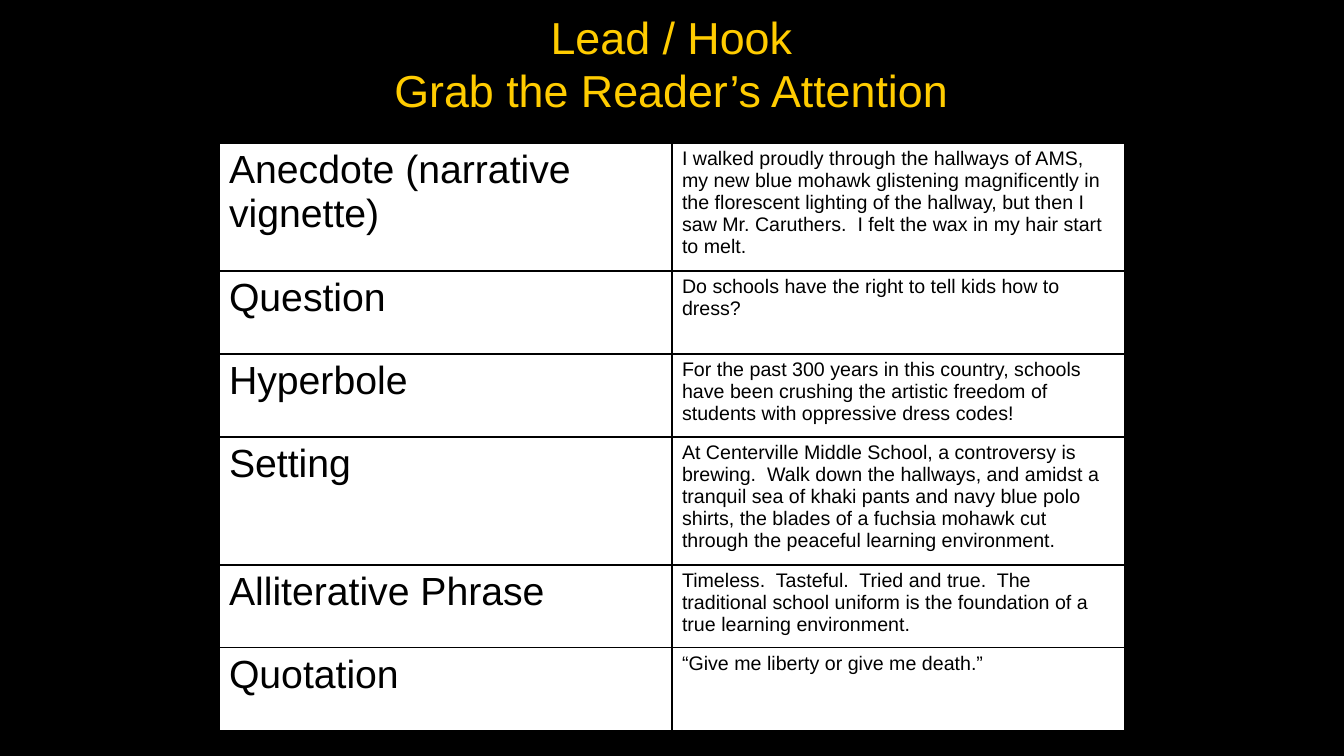
from dataclasses import dataclass

from lxml import etree
from pptx import Presentation
from pptx.dml.color import RGBColor
from pptx.enum import text
from pptx.oxml import ns
from pptx.util import Pt

EMU_PER_PX = 914400 / 100.8


@dataclass(frozen=True)
class Theme:
    font: str = "Arial"
    background: str = "000000"
    title: str = "FFCC00"
    cell: str = "FFFFFF"
    ink: str = "000000"
    title_size: int = 32
    term_size: int = 28
    example_size: int = 14
    thick: float = 2.25
    thin: float = 1


THEME = Theme()
TITLE = "Lead / Hook\vGrab the Reader’s Attention"
TALL, SHORT = 128, 83
COLUMN_WIDTH = 453
HOOKS = [
    ("Anecdote (narrative vignette)",
     "I walked proudly through the hallways of AMS, my new blue mohawk "
     "glistening magnificently in the florescent lighting of the hallway, but "
     "then I saw Mr. Caruthers.  I felt the wax in my hair start to melt.",
     TALL),
    ("Question", "Do schools have the right to tell kids how to dress?", SHORT),
    ("Hyperbole",
     "For the past 300 years in this country, schools have been crushing the "
     "artistic freedom of students with oppressive dress codes!", SHORT),
    ("Setting",
     "At Centerville Middle School, a controversy is brewing.  Walk down the "
     "hallways, and amidst a tranquil sea of khaki pants and navy blue polo "
     "shirts, the blades of a fuchsia mohawk cut through the peaceful learning "
     "environment.", TALL),
    ("Alliterative Phrase",
     "Timeless.  Tasteful.  Tried and true.  The traditional school uniform is "
     "the foundation of a true learning environment.", SHORT),
    ("Quotation", "“Give me liberty or give me death.”", SHORT),
]


def px(length):
    return round(length * EMU_PER_PX)


def paint(fill, color):
    fill.solid()
    fill.fore_color.rgb = RGBColor.from_string(color)


def write(frame, words, size, color):
    frame.text = words
    for para in frame.paragraphs:
        for span in para.runs:
            span.font.name = THEME.font
            span.font.size = Pt(size)
            span.font.color.rgb = RGBColor.from_string(color)


def add_title(page):
    box = page.shapes.add_textbox(px(218), 0, px(907), px(126))
    frame = box.text_frame
    frame.word_wrap = True
    frame.vertical_anchor = text.MSO_ANCHOR.MIDDLE
    write(frame, TITLE, THEME.title_size, THEME.title)
    frame.paragraphs[0].alignment = text.PP_ALIGN.CENTER


def add_borders(cell, top, bottom):
    """Rule the cell's sides thick and its top and bottom as given, in points."""
    properties = cell._tc.get_or_add_tcPr()
    widths = {"L": THEME.thick, "R": THEME.thick, "T": top, "B": bottom}
    for side, width in widths.items():
        line = etree.SubElement(properties, ns.qn(f"a:ln{side}"), w=str(Pt(width)))
        fill = etree.SubElement(line, ns.qn("a:solidFill"))
        etree.SubElement(fill, ns.qn("a:srgbClr"), val=THEME.ink)


def add_hook_table(page):
    height = sum(hook[2] for hook in HOOKS)
    table = page.shapes.add_table(
        len(HOOKS), 2, px(219), px(143), px(2 * COLUMN_WIDTH), px(height)).table
    table.first_row = table.horz_banding = False
    for column in table.columns:
        column.width = px(COLUMN_WIDTH)
    last = len(HOOKS) - 1
    for index, (term, example, row_height) in enumerate(HOOKS):
        table.rows[index].height = px(row_height)
        top = THEME.thick if index == 0 else THEME.thin
        bottom = THEME.thick if index == last else THEME.thin
        entries = [(term, THEME.term_size), (example, THEME.example_size)]
        for cell, (words, size) in zip(table.rows[index].cells, entries):
            add_borders(cell, top, bottom)
            paint(cell.fill, THEME.cell)
            write(cell.text_frame, words, size, THEME.ink)


def main():
    deck = Presentation()
    deck.slide_width, deck.slide_height = px(1344), px(756)
    page = deck.slides.add_slide(deck.slide_layouts[6])
    paint(page.background.fill, THEME.background)
    add_title(page)
    add_hook_table(page)
    deck.save("out.pptx")


if __name__ == "__main__":
    main()
